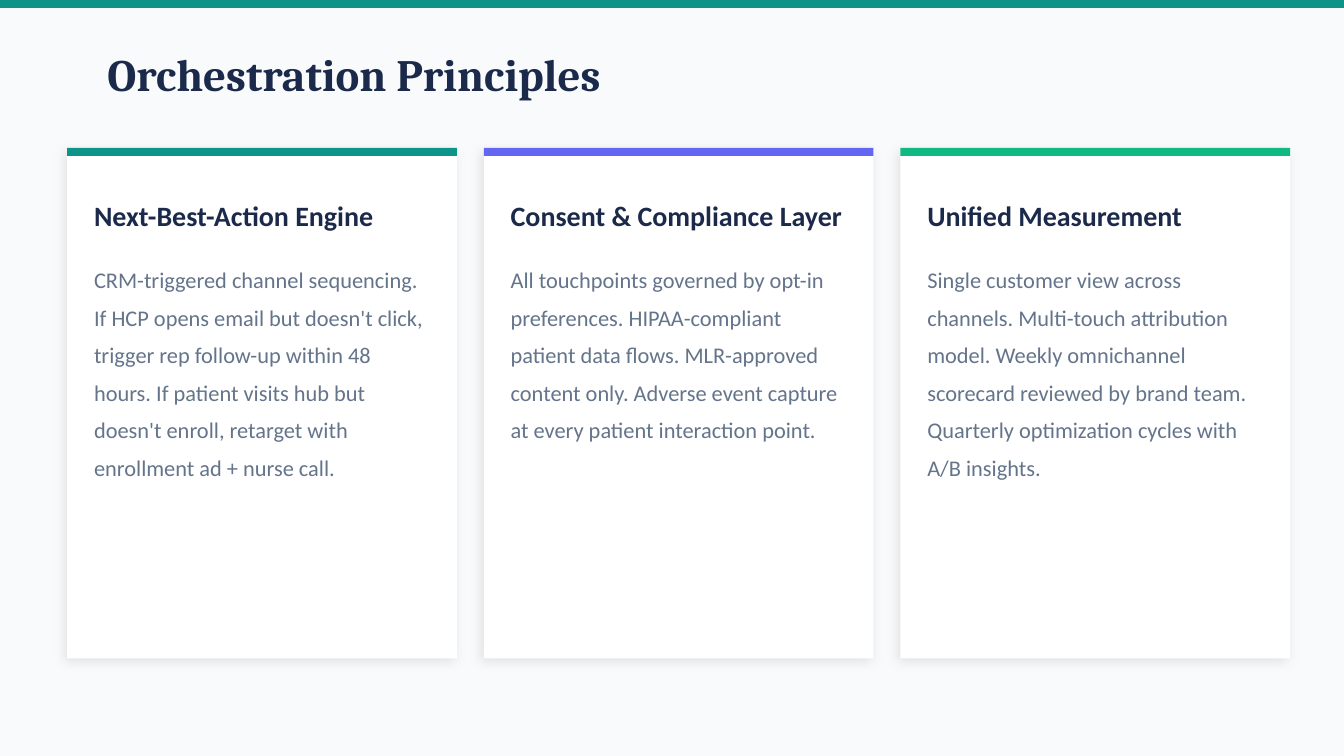
import pptx
import pptx.dml.color
import pptx.enum.shapes
import pptx.enum.text
import pptx.oxml
import pptx.oxml.ns
import pptx.util

EMU_PER_PX = 4572
NAVY, SLATE, TEAL = "1B2A4A", "64748B", "0D9488"
CARD_LEFT, CARD_TOP, CARD_WIDTH, CARD_HEIGHT = 100, 220, 580, 760
CARD_GAP, CARD_PADDING, BAR_HEIGHT = 40, 40, 12

PRINCIPLES = [
    ("Next-Best-Action Engine", TEAL,
     "CRM-triggered channel sequencing. If HCP opens email but doesn't click, "
     "trigger rep follow-up within 48 hours. If patient visits hub but doesn't "
     "enroll, retarget with enrollment ad + nurse call."),
    ("Consent & Compliance Layer", "6366F1",
     "All touchpoints governed by opt-in preferences. HIPAA-compliant patient "
     "data flows. MLR-approved content only. Adverse event capture at every "
     "patient interaction point."),
    ("Unified Measurement", "10B981",
     "Single customer view across channels. Multi-touch attribution model. "
     "Weekly omnichannel scorecard reviewed by brand team. Quarterly "
     "optimization cycles with A/B insights."),
]


def px(length):
    return pptx.util.Emu(length * EMU_PER_PX)


def color(hex_code):
    return pptx.dml.color.RGBColor.from_string(hex_code)


def apply(target, values):
    for name, value in values.items():
        setattr(target, name, value)


class PrinciplesSlide:
    """Holds the text styles and the current slide, and draws its elements."""

    styles = {
        "title": ({"name": "Cambria", "size": pptx.util.Pt(24), "bold": True}, NAVY, 1.0),
        "heading": ({"name": "Calibri", "size": pptx.util.Pt(15), "bold": True}, NAVY, 1.0),
        "body": ({"name": "Calibri", "size": pptx.util.Pt(12), "bold": False}, SLATE, 1.4),
    }

    def __init__(self, deck):
        self.slide = deck.slides.add_slide(deck.slide_layouts[6])
        self.slide.background.fill.solid()
        self.slide.background.fill.fore_color.rgb = color("F8FAFC")

    def panel(self, left, top, width, height, fill):
        panel = self.slide.shapes.add_shape(
            pptx.enum.shapes.MSO_SHAPE.RECTANGLE,
            px(left), px(top), px(width), px(height))
        panel.fill.solid()
        panel.fill.fore_color.rgb = color(fill)
        panel.line.fill.background()
        panel.shadow.inherit = False
        return panel

    def soft_shadow(self, panel):
        effects = panel._element.spPr.find(pptx.oxml.ns.qn("a:effectLst"))
        effects.append(pptx.oxml.parse_xml(
            f'<a:outerShdw {pptx.oxml.ns.nsdecls("a")} blurRad="76200" dist="25400" '
            'dir="8100000" algn="bl" rotWithShape="0"><a:srgbClr val="000000">'
            '<a:alpha val="10000"/></a:srgbClr></a:outerShdw>'))

    def text(self, left, top, width, height, wording, role, anchor="MIDDLE"):
        font_values, ink, spacing = self.styles[role]
        frame = self.slide.shapes.add_textbox(
            px(left), px(top), px(width), px(height)).text_frame
        apply(frame, {
            "word_wrap": True,
            "vertical_anchor": pptx.enum.text.MSO_ANCHOR[anchor],
            "margin_left": 0, "margin_top": 0, "margin_right": 0, "margin_bottom": 0,
        })
        paragraph = frame.paragraphs[0]
        paragraph.line_spacing = spacing
        wording_run = paragraph.add_run()
        wording_run.text = wording
        apply(wording_run.font, font_values)
        wording_run.font.color.rgb = color(ink)

    def card(self, left, heading, accent, body):
        self.soft_shadow(self.panel(left, CARD_TOP, CARD_WIDTH, CARD_HEIGHT, "FFFFFF"))
        self.panel(left, CARD_TOP, CARD_WIDTH, BAR_HEIGHT, accent)
        inner_left = left + CARD_PADDING
        inner_width = CARD_WIDTH - 2 * CARD_PADDING
        self.text(inner_left, CARD_TOP + 50, inner_width, 100, heading, "heading")
        self.text(inner_left, CARD_TOP + 160, inner_width, 560, body, "body", "TOP")


def main():
    deck = pptx.Presentation()
    apply(deck, {"slide_width": px(2000), "slide_height": px(1125)})
    principles = PrinciplesSlide(deck)
    principles.panel(0, 0, 2000, BAR_HEIGHT, TEAL)
    principles.text(160, 60, 1600, 100, "Orchestration Principles", "title")
    for column, principle in enumerate(PRINCIPLES):
        principles.card(CARD_LEFT + column * (CARD_WIDTH + CARD_GAP), *principle)
    deck.save("out.pptx")


if __name__ == "__main__":
    main()
